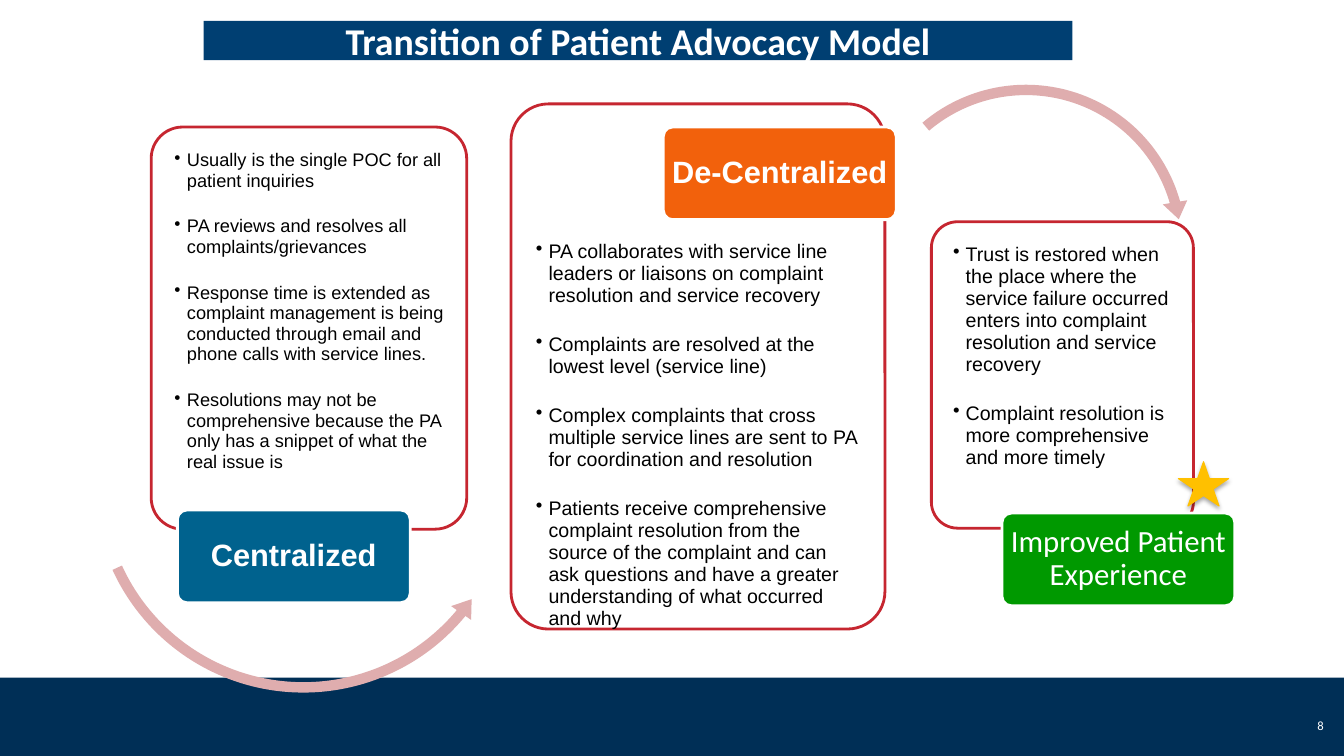
from pptx import Presentation
from pptx.util import Pt
from pptx.dml.color import RGBColor as RGB
from pptx.enum.shapes import MSO_SHAPE as Kind
from pptx.enum.text import MSO_ANCHOR as Anchor, PP_ALIGN as Align
from pptx.oxml import parse_xml
from pptx.oxml.ns import nsdecls, qn
from lxml.etree import SubElement as Sub

HUES = {
    "navy": "002F56", "title": "003F72", "white": "FFFFFF", "black": "000000",
    "red": "C62630", "pink": "DFADAE", "blue": "00628E", "orange": "F2610C",
    "green": "009900", "gold": "FFC000",
}
TITLE = "Transition of Patient Advocacy Model"
STAGES = [
    {"box": (108, 90.7, 225.4, 287.3), "top": 10, "size": 13, "gap": 18,
     "points": [
         "Usually is the single POC for all patient inquiries",
         "PA reviews and resolves all complaints/grievances",
         "Response time is extended as complaint management is being conducted "
         "through email and phone calls with service lines.",
         "Resolutions may not be comprehensive because the PA only has a snippet "
         "of what the real issue is"],
     "label": ("Centralized", "blue", "Arial", True), "spot": (126.7, 364.3),
     "arrow": (Kind.LEFT_CIRCULAR_ARROW, (61.9, 190.1, 309.6), 18,
               (2.4, 2.8), (4.88, 21.53, 137.47))},
    {"box": (365, 74.2, 267.1, 375.1), "top": 90, "size": 14, "gap": 19,
     "points": [
         "PA collaborates with service line leaders or liaisons on complaint "
         "resolution and service recovery",
         "Complaints are resolved at the lowest level (service line)",
         "Complex complaints that cross multiple service lines are sent to PA "
         "for coordination and resolution",
         "Patients receive comprehensive complaint resolution from the source of "
         "the complaint and can ask questions and have a greater understanding of "
         "what occurred and why"],
     "label": ("De-Centralized", "orange", "Arial", True), "spot": (473.8, 90.7),
     "arrow": (Kind.CIRCULAR_ARROW, (613.4, 55.4, 239), 0,
               (3.1, 3.7), (6.42, 344.08, 229.68))},
    {"box": (665.3, 158.4, 187.2, 218.9), "top": 10, "size": 14, "gap": 19,
     "points": [
         "Trust is restored when the place where the service failure occurred "
         "enters into complaint resolution and service recovery",
         "Complaint resolution is more comprehensive and more timely"],
     "label": ("Improved Patient Experience", "green", "Calibri", False),
     "spot": (715.7, 366.5), "arrow": None},
]
LABEL = (166.3, 66.2)
WIDE, HIGH = 960, 540


def tint(name):
    return RGB.from_string(HUES[name])


def draw(slide, kind, box, fill, line=None, width=2):
    item = slide.shapes.add_shape(kind, *map(Pt, box))
    item.shadow.inherit = False
    item.fill.solid()
    item.fill.fore_color.rgb = tint(fill)
    if line:
        item.line.color.rgb = tint(line)
        item.line.width = Pt(width)
    else:
        item.line.fill.background()
    return item


def frame(item, anchor, left, top):
    text = item.text_frame
    text.word_wrap = True
    text.vertical_anchor = anchor
    text.margin_left = text.margin_right = Pt(left)
    text.margin_top = Pt(top)
    text.margin_bottom = Pt(min(left, top))
    return text


def style(para, words, face, size, hue, align, bold=False, pitch=None):
    para.text = words
    para.alignment = align
    para.line_spacing = pitch
    font = para.font
    font.name, font.size, font.bold = face, Pt(size), bold
    font.color.rgb = tint(hue)


def card(slide, stage):
    item = draw(slide, Kind.ROUNDED_RECTANGLE, stage["box"], "white", "red")
    item.adjustments[0] = 0.1
    text = frame(item, Anchor.TOP, 10, stage["top"])
    for i, words in enumerate(stage["points"]):
        para = text.paragraphs[0] if i == 0 else text.add_paragraph()
        props = para._p.get_or_add_pPr()
        props.set("marL", str(Pt(9)))
        props.set("indent", str(-Pt(9)))
        Sub(props, qn("a:buChar")).set("char", "•")
        style(para, words, "Arial", stage["size"], "black", Align.LEFT, pitch=0.94)
        if i < len(stage["points"]) - 1:
            para.space_after = Pt(stage["gap"])


def sweep(slide, kind, place, turn, sizes, angles):
    left, top, side = place
    item = draw(slide, kind, (left, top, side, side), "pink")
    item.rotation = turn
    stem, head = (size / 100 for size in sizes)
    for i, value in enumerate([stem, *(0.6 * a for a in angles), head]):
        item.adjustments[i] = value


def tag(slide, spot, words, hue, face, bold):
    item = draw(slide, Kind.ROUNDED_RECTANGLE, spot + LABEL, hue, "white")
    item.adjustments[0] = 0.1
    text = frame(item, Anchor.MIDDLE, 3, 2)
    style(text.paragraphs[0], words, face, 22, "white", Align.CENTER, bold, 0.9)


def star(slide):
    item = draw(slide, Kind.STAR_5_POINT, (841.7, 329.8, 36, 31.7), "gold", "gold", 0.75)
    props = item._element.spPr
    props.remove(props.find(qn("a:effectLst")))
    props.append(parse_xml(
        f'<a:effectLst {nsdecls("a")}><a:outerShdw blurRad="{Pt(3.1)}" '
        f'dist="{Pt(1.8)}" dir="5400000" rotWithShape="0"><a:srgbClr '
        f'val="{HUES["black"]}"><a:alpha val="35000"/></a:srgbClr>'
        '</a:outerShdw></a:effectLst>'))


def main():
    """Build the patient advocacy transition slide."""
    deck = Presentation()
    deck.slide_width, deck.slide_height = Pt(WIDE), Pt(HIGH)
    slide = deck.slides.add_slide(deck.slide_layouts[6])
    draw(slide, Kind.RECTANGLE, (0, 484, WIDE, HIGH - 484), "navy")
    page = slide.shapes.add_textbox(*map(Pt, (728.6, 504, 224, 28.8)))
    text = frame(page, Anchor.MIDDLE, 7.2, 3.6)
    style(text.paragraphs[0], "8", "Calibri", 9, "white", Align.RIGHT)
    bar = draw(slide, Kind.RECTANGLE, (145.4, 15, 620.6, 28), "title")
    text = frame(bar, Anchor.MIDDLE, 5, 3)
    style(text.paragraphs[0], TITLE, "Calibri", 27, "white", Align.CENTER, True)
    for stage in STAGES:
        card(slide, stage)
        if stage["arrow"]:
            sweep(slide, *stage["arrow"])
        tag(slide, stage["spot"], *stage["label"])
    star(slide)
    deck.save("out.pptx")


if __name__ == "__main__":
    main()
